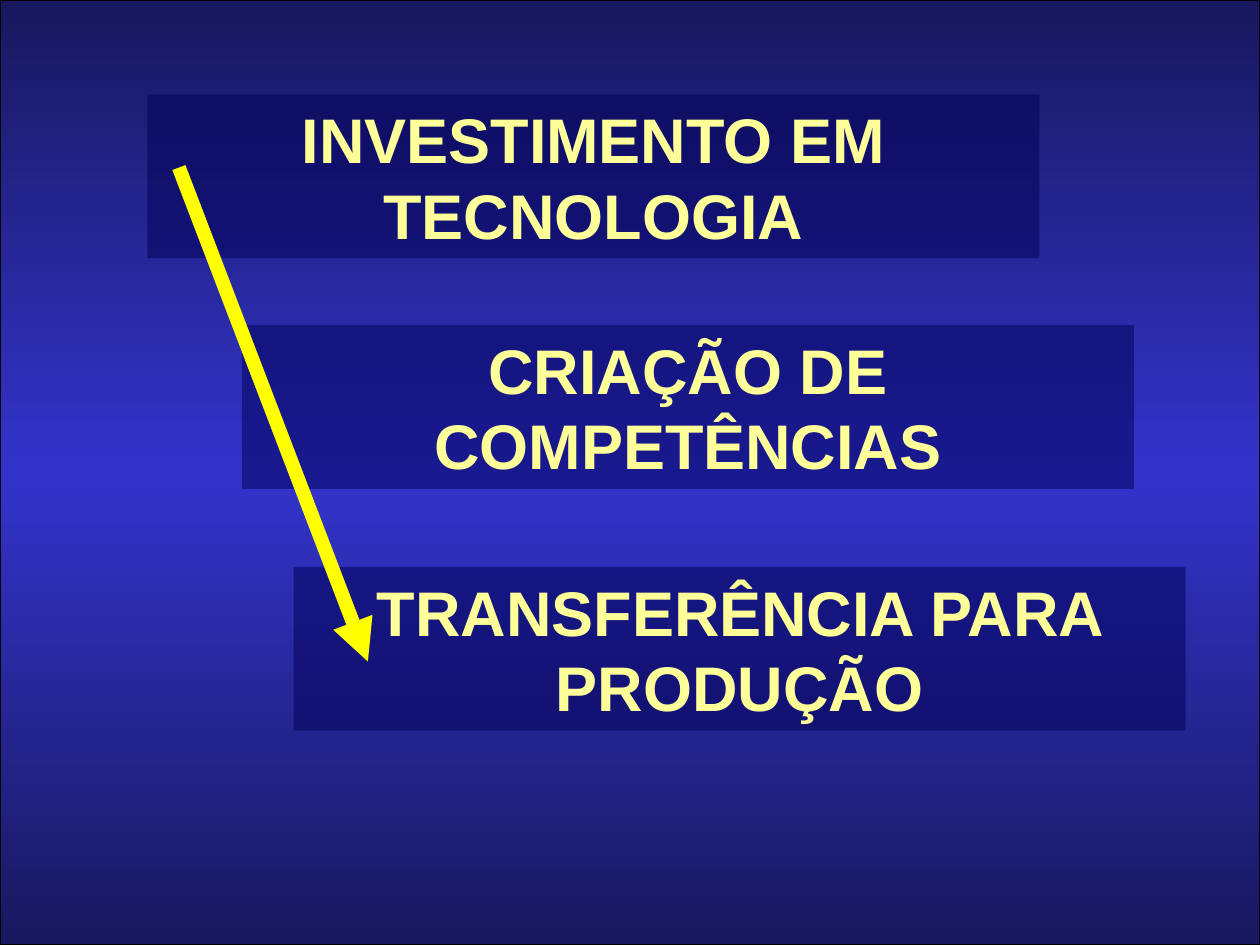
from lxml import etree
from pptx import Presentation
from pptx.dml.color import RGBColor
from pptx.enum.shapes import MSO_CONNECTOR, MSO_SHAPE
from pptx.enum.text import MSO_ANCHOR, PP_ALIGN
from pptx.oxml import parse_xml
from pptx.oxml.ns import nsdecls, qn
from pptx.util import Inches, Pt

COLORS = {
    "background": "CCECFF",
    "edge": "18185E",
    "middle": "3333CC",
    "border": "000000",
    "box": "000054",
    "text": "FFFF99",
    "arrow": "FFFF00",
}


def rgb(name):
    return RGBColor.from_string(COLORS[name])


presentation = Presentation()
presentation.slide_width = Inches(10)
presentation.slide_height = Inches(7.5)
slide = presentation.slides.add_slide(presentation.slide_layouts[6])
slide.background.fill.solid()
slide.background.fill.fore_color.rgb = rgb("background")

# Full-slide panel, dark at top and bottom
panel = slide.shapes.add_shape(
    MSO_SHAPE.RECTANGLE, 0, 0, presentation.slide_width, presentation.slide_height)
panel.shadow.inherit = False
panel.line.color.rgb = rgb("border")
panel.line.width = Pt(0.75)
stops = "".join(
    f'<a:gs pos="{position}"><a:srgbClr val="{COLORS[name]}"/></a:gs>'
    for position, name in ((0, "edge"), (50000, "middle"), (100000, "edge")))
gradient = parse_xml(
    f'<a:gradFill {nsdecls("a")} rotWithShape="1"><a:gsLst>{stops}</a:gsLst>'
    '<a:lin ang="5400000" scaled="1"/></a:gradFill>')
panel._element.spPr.find(qn("a:prstGeom")).addnext(gradient)

# Three translucent steps
steps = [
    (1.17, 0.75, "INVESTIMENTO EM TECNOLOGIA"),
    (1.92, 2.58, "CRIAÇÃO DE COMPETÊNCIAS"),
    (2.33, 4.5, "TRANSFERÊNCIA PARA PRODUÇÃO"),
]
for left, top, text in steps:
    box = slide.shapes.add_shape(
        MSO_SHAPE.RECTANGLE, Inches(left), Inches(top), Inches(7.08), Inches(1.3))
    box.shadow.inherit = False
    box.fill.solid()
    box.fill.fore_color.rgb = rgb("box")
    fill_color = box._element.spPr.find(qn("a:solidFill"))[0]
    etree.SubElement(fill_color, qn("a:alpha"), val="50000")
    box.line.fill.background()
    frame = box.text_frame
    frame.word_wrap = True
    frame.vertical_anchor = MSO_ANCHOR.TOP
    paragraph = frame.paragraphs[0]
    paragraph.alignment = PP_ALIGN.CENTER
    run = paragraph.add_run()
    run.text = text
    run.font.name = "Arial"
    run.font.size = Pt(36)
    run.font.bold = True
    run.font.color.rgb = rgb("text")

# Arrow from the first step to the last
arrow = slide.shapes.add_connector(
    MSO_CONNECTOR.STRAIGHT, Inches(1.42), Inches(1.33), Inches(2.92), Inches(5.25))
arrow.line.color.rgb = rgb("arrow")
arrow.line.width = Pt(8)
etree.SubElement(arrow.line._get_or_add_ln(), qn("a:tailEnd"), type="triangle")
etree.SubElement(arrow._element.spPr, qn("a:effectLst"))

presentation.save("out.pptx")
